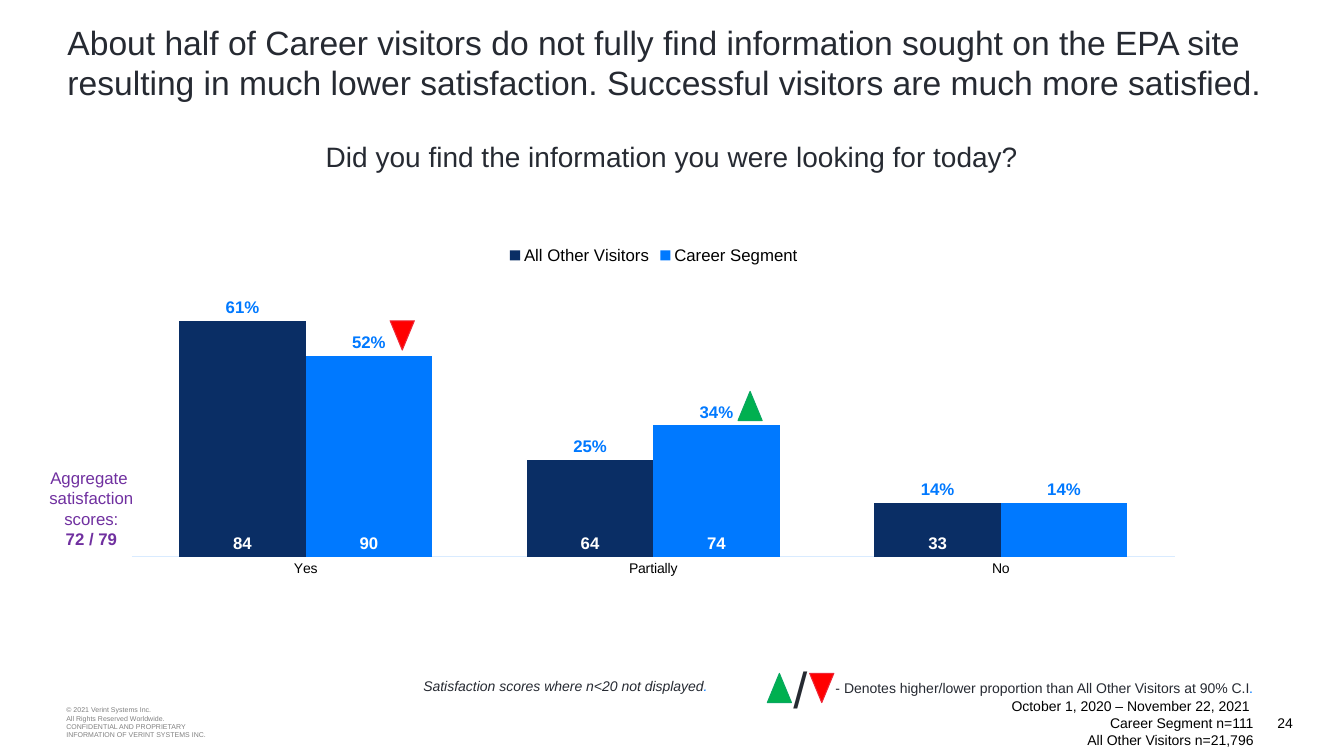
from collections import namedtuple
from copy import deepcopy
from pptx import Presentation
from pptx.chart.data import CategoryChartData
from pptx.dml.color import RGBColor
from pptx.enum.chart import (XL_CHART_TYPE, XL_LABEL_POSITION, XL_LEGEND_POSITION,
                             XL_TICK_LABEL_POSITION, XL_TICK_MARK)
from pptx.enum.shapes import MSO_SHAPE
from pptx.enum.text import MSO_ANCHOR, PP_ALIGN
from pptx.oxml import parse_xml
from pptx.oxml.ns import nsdecls, qn
from pptx.util import Inches, Pt

SLIDE_W, SLIDE_H = Inches(13.33), Inches(7.5)
FONT = "Arial"
INK, BLACK = RGBColor(0x26, 0x2A, 0x32), RGBColor(0, 0, 0)
WHITE, GREY = RGBColor(255, 255, 255), RGBColor(0x80, 0x80, 0x80)
NAVY, BLUE = RGBColor(0x0A, 0x2E, 0x65), RGBColor(0x00, 0x79, 0xFF)
PALE_BLUE, PURPLE = RGBColor(0xD9, 0xEB, 0xFF), RGBColor(0x70, 0x30, 0xA0)
GREEN, GREEN_EDGE = RGBColor(0x00, 0xB0, 0x50), RGBColor(0x09, 0xA7, 0x61)
RED, RED_EDGE = RGBColor(0xFF, 0, 0), RGBColor(0xEE, 0x27, 0x37)
MARKER_W, MARKER_H = 1.8, 3.87

# All box lengths are percentages of the slide's width and height.
Box = namedtuple("Box", "left top width height")

def within(box, dx, dy, width, height):
    return Box(box.left + dx, box.top + dy, width, height)

def emu(box):
    return [round(share * side / 100)
            for share, side in zip(box, (SLIDE_W, SLIDE_H) * 2)]

def style(font, size, color, bold=False, italic=False):
    font.name, font.size, font.bold, font.italic = FONT, Pt(size), bold, italic
    font.color.rgb = color

def add_text(slide, box, text, size, color, align=PP_ALIGN.LEFT,
             anchor=MSO_ANCHOR.TOP, wrap=True, italic=False):
    frame = slide.shapes.add_textbox(*emu(box)).text_frame
    frame.word_wrap, frame.vertical_anchor = wrap, anchor
    frame.text = text
    for paragraph in frame.paragraphs:
        paragraph.alignment = align
        for run in paragraph.runs:
            style(run.font, size, color, italic=italic)
    return frame

def add_blue_stop(frame, italic=False):
    stop = frame.paragraphs[0].add_run()
    stop.text = "."
    style(stop.font, 10, BLUE, italic=italic)

def add_marker(slide, box, dx, dy, higher):
    """Green triangle pointing up for higher, red pointing down for lower."""
    marker = slide.shapes.add_shape(
        MSO_SHAPE.ISOSCELES_TRIANGLE, *emu(within(box, dx, dy, MARKER_W, MARKER_H)))
    marker.shadow.inherit = False
    marker.rotation = 0 if higher else 180
    marker.fill.solid()
    marker.fill.fore_color.rgb = GREEN if higher else RED
    marker.line.color.rgb = GREEN_EDGE if higher else RED_EDGE
    marker.line.width = Pt(0.75)

def label_series(series, color, number_format, position):
    labels = series.data_labels
    labels.show_value = True
    labels.number_format, labels.number_format_is_linked = number_format, False
    labels.position = position
    style(labels.font, 12, color, bold=True)

def move_scores_to_second_axis(plot_area):
    """Put the last two series on an axis pair of their own."""
    shares = plot_area.find(qn("c:barChart"))
    scores = deepcopy(shares)
    for group, dropped in ((shares, slice(2, 4)), (scores, slice(0, 2))):
        for series in group.findall(qn("c:ser"))[dropped]:
            group.remove(series)
    shares.addnext(scores)

    first_axes = [plot_area.find(qn(tag)) for tag in ("c:catAx", "c:valAx")]
    category_axis, score_axis = second_axes = [deepcopy(axis) for axis in first_axes]
    new_ids = {axis.find(qn("c:axId")).get("val"): str(5001 + i)
               for i, axis in enumerate(first_axes)}
    references = scores.findall(qn("c:axId"))
    for axis in second_axes:
        references += [axis.find(qn("c:axId")), axis.find(qn("c:crossAx"))]
    for reference in references:
        reference.set("val", new_ids[reference.get("val")])
    category_axis.find(qn("c:delete")).set("val", "1")
    score_axis.find(qn("c:axPos")).set("val", "r")
    score_axis.find(qn("c:crosses")).set("val", "max")
    scaling = score_axis.find(qn("c:scaling"))
    scaling.remove(scaling.find(qn("c:max")))
    first_axes[1].addnext(score_axis)
    score_axis.addnext(category_axis)

def set_plot_layout(plot_area, x, y, w, h):
    for layout in plot_area.findall(qn("c:layout")):
        plot_area.remove(layout)
    plot_area.insert(0, parse_xml(
        f'<c:layout {nsdecls("c")}><c:manualLayout><c:layoutTarget val="inner"/>'
        f'<c:xMode val="edge"/><c:yMode val="edge"/><c:x val="{x}"/><c:y val="{y}"/>'
        f'<c:w val="{w}"/><c:h val="{h}"/></c:manualLayout></c:layout>'))

def add_legend(chart, hidden):
    chart.has_legend = True
    legend = chart.legend
    legend.position, legend.include_in_layout = XL_LEGEND_POSITION.TOP, False
    style(legend.font, 12, BLACK)
    place = legend._element.find(qn("c:legendPos"))
    for index in reversed(hidden):
        place.addnext(parse_xml(f'<c:legendEntry {nsdecls("c")}><c:idx val="{index}"/>'
                                '<c:delete val="1"/></c:legendEntry>'))

def visitor_chart(slide, box):
    data = CategoryChartData()
    data.categories = ["Yes", "Partially", "No"]
    data.add_series("All Other Visitors", (0.61, 0.25, 0.14))
    data.add_series("Career Segment", (0.52, 0.34, 0.14))
    data.add_series("Series 3", (84, 64, 33))
    data.add_series("Series 4", (90, 74, None))
    chart = slide.shapes.add_chart(XL_CHART_TYPE.COLUMN_CLUSTERED, *emu(box), data).chart
    chart.has_title = False
    style(chart.font, 10, BLUE)

    plot = chart.plots[0]
    plot.gap_width, plot.overlap, plot.vary_by_categories = 75, 0, False
    bars = list(plot.series)
    for series, color in zip(bars[:2], (NAVY, BLUE)):
        series.format.fill.solid()
        series.format.fill.fore_color.rgb = color
        label_series(series, BLUE, "0%", XL_LABEL_POSITION.OUTSIDE_END)
    for series in bars[2:]:
        series.format.fill.background()
        label_series(series, WHITE, "0", XL_LABEL_POSITION.INSIDE_BASE)

    answers, shares = chart.category_axis, chart.value_axis
    answers.major_tick_mark = XL_TICK_MARK.NONE
    answers.format.line.color.rgb = PALE_BLUE
    answers.format.line.width = Pt(0.75)
    style(answers.tick_labels.font, 10, BLACK)
    shares.minimum_scale, shares.maximum_scale = 0, 0.7
    shares.has_major_gridlines = False
    shares.tick_label_position = XL_TICK_LABEL_POSITION.NONE
    shares.format.line.fill.background()

    add_legend(chart, hidden=(2, 3))
    plot_area = plot._element.getparent()
    set_plot_layout(plot_area, 0.014, 0.127, 0.971, 0.677)
    move_scores_to_second_axis(plot_area)
    add_marker(slide, box, 46.21, 20.67, higher=True)
    add_marker(slide, box, 20.33, 11.33, higher=False)

def aggregate_scores(slide, box):
    frame = add_text(slide, box, "Aggregate \nsatisfaction scores:\n72 / 79",
                     12, PURPLE, PP_ALIGN.CENTER)
    frame.paragraphs[-1].runs[0].font.bold = True

def score_note(slide, box):
    frame = add_text(slide, box, "Satisfaction scores where n<20 not displayed",
                     10, INK, anchor=MSO_ANCHOR.MIDDLE, italic=True)
    frame.margin_top = frame.margin_bottom = 0
    add_blue_stop(frame, italic=True)

def significance_key(slide, box):
    add_blue_stop(add_text(
        slide, within(box, 4.05, 2.8, 33.61, 3.6),
        " - Denotes higher/lower proportion than All Other Visitors at 90% C.I",
        10, INK, anchor=MSO_ANCHOR.MIDDLE))
    add_marker(slide, box, 0, 2.67, higher=True)
    add_marker(slide, box, 3.15, 2.67, higher=False)
    add_text(slide, within(box, 1.2, 0, 2.55, box.height), "/", 36, INK, wrap=False)

def footer(slide, box):
    legal = ("© 2021 Verint Systems Inc.\nAll Rights Reserved Worldwide.\n"
             "CONFIDENTIAL AND PROPRIETARY\nINFORMATION OF VERINT SYSTEMS INC.")
    sample = ("October 1, 2020 – November 22, 2021 \nCareer Segment n=111\n"
              "All Other Visitors n=21,796")
    for dx, width, text, size, color, align in (
            (0, 18, legal, 5, GREY, PP_ALIGN.LEFT),
            (44.79, 45.01, sample, 10, BLACK, PP_ALIGN.RIGHT),
            (84.4, 8.33, "24", 10, BLACK, PP_ALIGN.RIGHT)):
        add_text(slide, within(box, dx, 0, width, box.height), text, size, color,
                 align, MSO_ANCHOR.MIDDLE)

def main():
    deck = Presentation()
    deck.slide_width, deck.slide_height = SLIDE_W, SLIDE_H
    slide = deck.slides.add_slide(deck.slide_layouts[6])
    add_text(slide, Box(4.28, 2.2, 91.52, 10.27),
             "About half of Career visitors do not fully find information sought on the "
             "EPA site resulting in much lower satisfaction. Successful visitors are much "
             "more satisfied.", 24, INK)
    add_text(slide, Box(11.63, 17.8, 76.74, 5.87),
             "Did you find the information you were looking for today?", 20, INK,
             PP_ALIGN.CENTER)
    visitor_chart(slide, Box(8.7, 31.1, 79.9, 52.93))
    aggregate_scores(slide, Box(2.3, 61.25, 9, 12.13))
    score_note(slide, Box(30.76, 89.33, 26.18, 2.93))
    significance_key(slide, Box(57.09, 86.4, 37.66, 9.47))
    footer(slide, Box(4.2, 92.45, 92.73, 6.27))
    deck.save("out.pptx")

if __name__ == "__main__":
    main()
